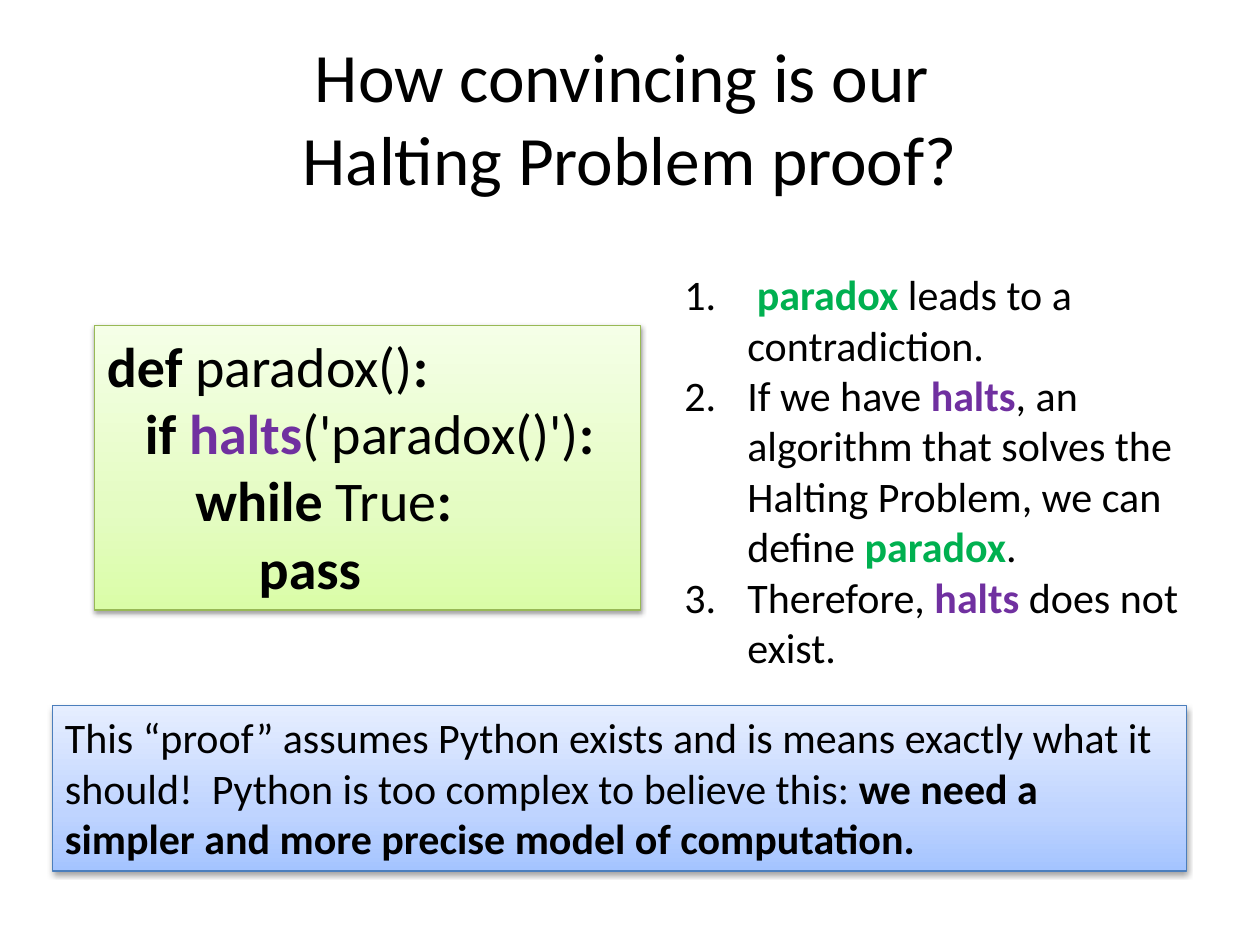
from copy import deepcopy
from lxml import etree
from pptx import Presentation
from pptx.dml.color import RGBColor as RGB
from pptx.enum.shapes import MSO_SHAPE as Shape
from pptx.enum.text import MSO_ANCHOR as Anchor, MSO_AUTO_SIZE as AutoSize, PP_ALIGN as Align
from pptx.oxml.ns import qn
from pptx.util import Pt

COLORS = {
    "text": "000000", "paradox": "00B050", "halts": "7030A0",
    "blue line": "4B7EBC", "green line": "98B955", "shadow": "000000",
}
GRADIENTS = {
    "blue": ("A4C4FF", "BFD4FF", "E6EEFF"),
    "green": ("DAFDA7", "E4FCC2", "F5FFE7"),
}
STOPS = (0, 0.35, 1)
FONT = "Calibri"
SPACE_WIDTH = 7.23
LIST_INDENT = 36

FORMATS = {
    "plain": {"bold": False, "color": "text"},
    "bold": {"bold": True, "color": "text"},
    "paradox": {"bold": True, "color": "paradox"},
    "halts": {"bold": True, "color": "halts"},
}

TITLE = [[("How convincing is our \vHalting Problem proof?", "plain")]]
CONCLUSION = [[
    ("This “proof” assumes Python exists and is means exactly what it should!  "
     "Python is too complex to believe this: ", "plain"),
    ("we need a simpler and more precise model of computation.", "bold"),
]]
CODE = [
    [("def ", "bold"), ("paradox()", "plain"), (":", "bold")],
    [("if ", "bold"), ("halts", "halts"), ("('paradox()')", "plain"), (":", "bold")],
    [("while", "bold"), (" True", "plain"), (":", "bold")],
    [("pass", "bold")],
]
CODE_SPACES = (0, 3, 7, 12)
ARGUMENT = [
    [(" ", "plain"), ("paradox", "paradox"), (" leads to a contradiction.", "plain")],
    [("If we have ", "plain"), ("halts", "halts"),
     (", an algorithm that solves the Halting Problem, we can define ", "plain"),
     ("paradox", "paradox"), (".", "plain")],
    [("Therefore, ", "plain"), ("halts", "halts"), (" does not exist.", "plain")],
]


def write(shape, paragraphs, size, align=Align.LEFT, anchor=Anchor.TOP, auto_size=AutoSize.NONE):
    frame = shape.text_frame
    settings = {"word_wrap": True, "vertical_anchor": anchor, "auto_size": auto_size}
    for name, value in settings.items():
        setattr(frame, name, value)
    for index, pieces in enumerate(paragraphs):
        paragraph = frame.add_paragraph() if index else frame.paragraphs[0]
        paragraph.alignment = align
        for text, style in pieces:
            for part, line in enumerate(text.split("\v")):
                if part:
                    paragraph.add_line_break()
                run = paragraph.add_run()
                run.text = line
                values = {"name": FONT, "size": Pt(size), "bold": FORMATS[style]["bold"]}
                for name, value in values.items():
                    setattr(run.font, name, value)
                run.font.color.rgb = RGB.from_string(COLORS[FORMATS[style]["color"]])
    return frame.paragraphs


def indent(paragraph, left, first=0):
    properties = paragraph._p.get_or_add_pPr()
    properties.set("marL", str(Pt(left)))
    properties.set("indent", str(Pt(first)))
    return properties


def add_shadow(shape):
    shape.shadow.inherit = False
    effects = shape._element.spPr.find(qn("a:effectLst"))
    shadow = etree.SubElement(effects, qn("a:outerShdw"), blurRad=str(Pt(3.1)),
                              dist=str(Pt(1.6)), dir="5400000", rotWithShape="0")
    color = etree.SubElement(shadow, qn("a:srgbClr"), val=COLORS["shadow"])
    etree.SubElement(color, qn("a:alpha"), val="38000")


def add_panel(slide, box, tone):
    shape = slide.shapes.add_shape(Shape.RECTANGLE, *map(Pt, box))
    shape.fill.gradient()
    shape.fill.gradient_angle = 90
    stop_list = shape._element.spPr.find(qn("a:gradFill")).find(qn("a:gsLst"))
    stop_list.append(deepcopy(stop_list[0]))
    for stop, position, color in zip(shape.fill.gradient_stops, STOPS, GRADIENTS[tone]):
        stop.position = position
        stop.color.rgb = RGB.from_string(color)
    shape.line.color.rgb = RGB.from_string(COLORS[f"{tone} line"])
    shape.line.width = Pt(0.75)
    add_shadow(shape)
    return shape


def main():
    presentation = Presentation()
    presentation.slide_width, presentation.slide_height = Pt(720), Pt(540)
    slide = presentation.slides.add_slide(presentation.slide_layouts[6])

    title = slide.shapes.add_textbox(*map(Pt, (36, 21.6, 648, 90)))
    write(title, TITLE, 39.6, Align.CENTER, Anchor.MIDDLE)

    conclusion = add_panel(slide, (30, 403.2, 648, 94.5), "blue")
    write(conclusion, CONCLUSION, 24, auto_size=AutoSize.SHAPE_TO_FIT_TEXT)

    code = add_panel(slide, (54, 185.8, 312, 162.8), "green")
    code_lines = write(code, CODE, 32, auto_size=AutoSize.SHAPE_TO_FIT_TEXT)
    for paragraph, spaces in zip(code_lines, CODE_SPACES):
        indent(paragraph, spaces * SPACE_WIDTH)

    argument = slide.shapes.add_textbox(*map(Pt, (384, 150, 318, 239.8)))
    for paragraph in write(argument, ARGUMENT, 24, auto_size=AutoSize.SHAPE_TO_FIT_TEXT):
        properties = indent(paragraph, LIST_INDENT, -LIST_INDENT)
        etree.SubElement(properties, qn("a:buFont"), typeface="+mj-lt")
        etree.SubElement(properties, qn("a:buAutoNum"), type="arabicPeriod")

    presentation.save("out.pptx")


if __name__ == "__main__":
    main()
